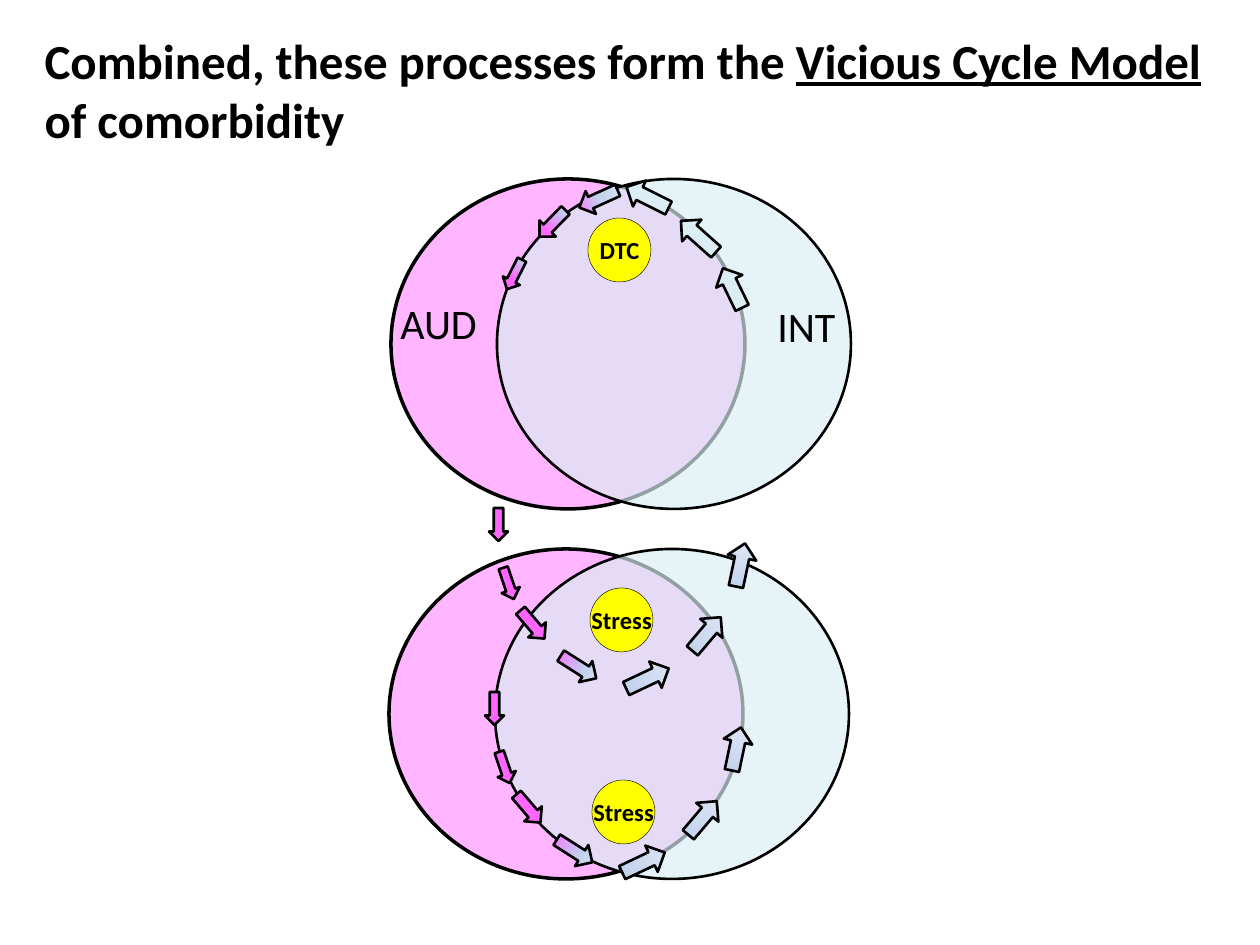
from dataclasses import dataclass

from lxml import etree
from pptx import Presentation
from pptx import util as u
from pptx.dml.color import RGBColor
from pptx.enum import shapes, text
from pptx.oxml import ns

PX = 914400 / 126
FONT = "Calibri"
COLORS = {
    "ink": "000000",
    "aud": "FF66FF",
    "int": "DBEEF4",
    "pale": "E1E8F5",
    "mist": "C2D1ED",
    "hub": "FFFF00",
}
Stops = tuple[tuple[int, str], ...]


@dataclass(frozen=True)
class Arrow:
    """A down arrow; one stop is a solid fill, several run from tail to head."""
    x: int
    y: int
    width: int
    height: int
    turn: float
    stops: Stops

    def moved(self, dx: int, dy: int) -> "Arrow":
        return Arrow(self.x + dx, self.y + dy, self.width, self.height, self.turn, self.stops)


def into_pink(mist: int, pink: int) -> Stops:
    return (0, "pale"), (mist, "mist"), (pink, "aud")


def out_of_pink(mist: int) -> Stops:
    return (0, "aud"), (mist, "mist"), (100, "pale")


AUD_FILL: Stops = ((0, "aud"),)
INT_FILL: Stops = ((0, "int"),)

UPPER_ARROWS = [
    Arrow(586, 178, 25, 42, 65.7, into_pink(50, 100)),
    Arrow(541, 205, 23, 37, 44.4, into_pink(22, 68)),
    Arrow(505, 258, 19, 33, 26.9, into_pink(15, 58)),
    Arrow(684, 213, 29, 47, 131.7, INT_FILL),
    Arrow(633, 174, 29, 47, 116.6, INT_FILL),
    Arrow(718, 266, 29, 44, 154.1, INT_FILL),
]
STRESS_ARROWS = [
    Arrow(688, 796, 29, 44, 220.3, out_of_pink(8)),
    Arrow(722, 727, 29, 44, 191.8, out_of_pink(1)),
    Arrow(629, 839, 29, 47, 244.7, out_of_pink(18)),
    Arrow(562, 830, 25, 42, 302.5, out_of_pink(60)),
    Arrow(517, 790, 23, 37, 319.5, AUD_FILL),
    Arrow(495, 751, 19, 33, 341.3, AUD_FILL),
    Arrow(485, 692, 19, 33, 0, AUD_FILL),
]


def px(*lengths: int) -> list[u.Emu]:
    return [u.Emu(round(length * PX)) for length in lengths]


def rgb(name: str) -> RGBColor:
    return RGBColor.from_string(COLORS[name])


def add_run(paragraph, words: str, size: int, bold: bool = False, underline: bool = False) -> None:
    run = paragraph.add_run()
    run.text = words
    run.font.name = FONT
    run.font.size = u.Pt(size)
    run.font.bold = bold
    run.font.underline = underline
    run.font.color.rgb = rgb("ink")


def add_outlined(group, preset, box: tuple[int, ...], fill: str, line: float):
    shape = group.shapes.add_shape(preset, *px(*box))
    shape.shadow.inherit = False
    shape.fill.solid()
    shape.fill.fore_color.rgb = rgb(fill)
    shape.line.color.rgb = rgb("ink")
    shape.line.width = u.Pt(line)
    return shape


def add_arrow(group, arrow: Arrow) -> None:
    box = (arrow.x, arrow.y, arrow.width, arrow.height)
    shape = add_outlined(group, shapes.MSO_SHAPE.DOWN_ARROW, box, arrow.stops[0][1], 1.5)
    shape.rotation = arrow.turn
    if len(arrow.stops) > 1:
        set_gradient(shape, arrow.stops)


def set_gradient(shape, stops: Stops) -> None:
    """Replace the solid fill by a gradient from top to bottom."""
    gradient = etree.Element(ns.qn("a:gradFill"), rotWithShape="1")
    stop_list = etree.SubElement(gradient, ns.qn("a:gsLst"))
    for position, name in stops:
        stop = etree.SubElement(stop_list, ns.qn("a:gs"), pos=str(position * 1000))
        etree.SubElement(stop, ns.qn("a:srgbClr"), val=COLORS[name])
    etree.SubElement(gradient, ns.qn("a:lin"), ang="5400000", scaled="0")
    properties = shape.fill._xPr
    properties.replace(properties.find(ns.qn("a:solidFill")), gradient)


def add_venn(group, aud_x: int, int_x: int, y: int) -> None:
    for x, name, opacity, line in ((aud_x, "aud", 48, 2), (int_x, "int", 67, 1.5)):
        circle = add_outlined(group, shapes.MSO_SHAPE.OVAL, (x, y, 354, 330), name, line)
        color = circle.fill._xPr.find(ns.qn("a:solidFill"))[0]
        etree.SubElement(color, ns.qn("a:alpha"), val=str(opacity * 1000))


def add_label(group, box: tuple[int, ...], words: str, size: int, bold: bool = False) -> None:
    label = group.shapes.add_textbox(*px(*box))
    label.text_frame.word_wrap = False
    label.text_frame.auto_size = text.MSO_AUTO_SIZE.SHAPE_TO_FIT_TEXT
    add_run(label.text_frame.paragraphs[0], words, size, bold)


def add_hub(group, x: int, y: int):
    return add_outlined(group, shapes.MSO_SHAPE.OVAL, (x, y, 63, 64), "hub", 0.25)


def add_stress_cycle(group, arrows: list[Arrow], hub_x: int, hub_y: int) -> None:
    for arrow in arrows:
        add_arrow(group, arrow)
    add_hub(group, hub_x, hub_y)
    add_label(group, (hub_x - 11, hub_y + 11, 87, 43), "Stress", 14, bold=True)


def add_title(slide) -> None:
    title = slide.shapes.title
    title.left, title.top, title.width, title.height = px(32, 10, 1197, 158)
    title.text_frame.vertical_anchor = text.MSO_ANCHOR.MIDDLE
    paragraph = title.text_frame.paragraphs[0]
    paragraph.alignment = text.PP_ALIGN.LEFT
    add_run(paragraph, "Combined, these processes form the ", 28, bold=True)
    add_run(paragraph, "Vicious Cycle Model ", 28, bold=True, underline=True)
    add_run(paragraph, "of comorbidity", 28, bold=True)


def add_upper_model(group) -> None:
    add_venn(group, 391, 497, 179)
    add_label(group, (765, 294, 86, 63), "INT", 24)
    add_label(group, (388, 291, 105, 63), "AUD", 24)
    for arrow in UPPER_ARROWS:
        add_arrow(group, arrow)
    frame = add_hub(group, 588, 218).text_frame
    frame.margin_left = frame.margin_right = frame.margin_top = frame.margin_bottom = 0
    frame.vertical_anchor = text.MSO_ANCHOR.MIDDLE
    frame.paragraphs[0].alignment = text.PP_ALIGN.CENTER
    add_run(frame.paragraphs[0], "DTC", 14, bold=True)


def main() -> None:
    deck = Presentation()
    deck.slide_width, deck.slide_height = px(1260, 945)
    slide = deck.slides.add_slide(deck.slide_layouts[5])
    add_title(slide)
    add_upper_model(slide.shapes.add_group_shape())

    lower_model = slide.shapes.add_group_shape()
    add_venn(lower_model, 389, 495, 549)
    add_stress_cycle(lower_model, STRESS_ARROWS, 592, 780)

    inner_cycle = slide.shapes.add_group_shape()
    inner_arrows = [arrow.moved(4, -184) for arrow in STRESS_ARROWS]
    add_stress_cycle(inner_cycle, inner_arrows, 590, 588)
    deck.save("out.pptx")


if __name__ == "__main__":
    main()
